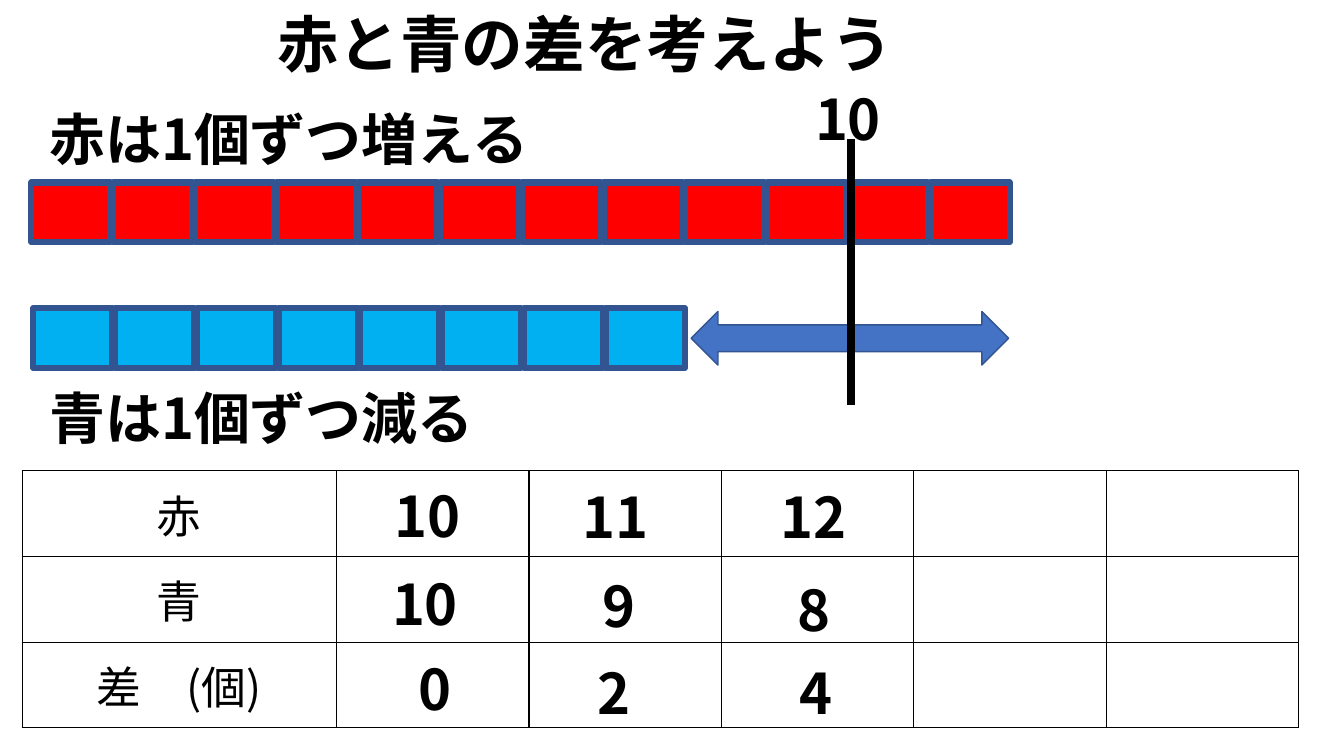
from dataclasses import dataclass

from lxml import etree
from pptx import Presentation
from pptx.dml.color import RGBColor
from pptx.enum.shapes import MSO_CONNECTOR, MSO_SHAPE
from pptx.enum.text import MSO_ANCHOR, MSO_AUTO_SIZE, PP_ALIGN
from pptx.oxml.ns import qn
from pptx.util import Cm, Pt

RECTANGLE = MSO_SHAPE.RECTANGLE
DOUBLE_ARROW = MSO_SHAPE.LEFT_RIGHT_ARROW
STRAIGHT = MSO_CONNECTOR.STRAIGHT
LEFT, CENTER = PP_ALIGN.LEFT, PP_ALIGN.CENTER
TOP, MIDDLE = MSO_ANCHOR.TOP, MSO_ANCHOR.MIDDLE
NO_AUTOFIT, GROW = MSO_AUTO_SIZE.NONE, MSO_AUTO_SIZE.SHAPE_TO_FIT_TEXT
TITLE_ONLY = 5


@dataclass(frozen=True)
class Theme:
    font: str = "Noto Sans CJK JP"
    black: str = "000000"
    red: str = "FF0000"
    blue: str = "00B0F0"
    arrow: str = "4472C4"
    outline: str = "325491"
    title_size: int = 44
    text_size: int = 40
    header_size: int = 32


class SlideBuilder:
    def __init__(self, slide, theme):
        self.slide = slide
        self.theme = theme

    def add_run(self, paragraph, text, size, bold=True, align=LEFT):
        paragraph.alignment = align
        run = paragraph.add_run()
        run.text = text
        run.font.size = Pt(size)
        run.font.bold = bold
        run.font.color.rgb = RGBColor.from_string(self.theme.black)
        run.font.name = self.theme.font
        latin = run.font._element.find(qn("a:latin"))
        east_asian = etree.Element(qn("a:ea"), typeface=self.theme.font)
        latin.addnext(east_asian)

    def title(self, text, left, top, width, height):
        title = self.slide.shapes.title
        title.left, title.top = Cm(left), Cm(top)
        title.width, title.height = Cm(width), Cm(height)
        frame = title.text_frame
        frame.auto_size = NO_AUTOFIT
        frame.vertical_anchor = TOP
        frame.word_wrap = True
        self.add_run(frame.paragraphs[0], text, self.theme.title_size)

    def text(self, text, left, top, width, height=1.96):
        box = self.slide.shapes.add_textbox(Cm(left), Cm(top), Cm(width), Cm(height))
        frame = box.text_frame
        frame.word_wrap = True
        frame.auto_size = GROW
        self.add_run(frame.paragraphs[0], text, self.theme.text_size)

    def shape(self, kind, left, top, width, height, fill, line_width):
        shape = self.slide.shapes.add_shape(kind, Cm(left), Cm(top), Cm(width), Cm(height))
        shape.shadow.inherit = False
        shape.fill.solid()
        shape.fill.fore_color.rgb = RGBColor.from_string(fill)
        shape.line.color.rgb = RGBColor.from_string(self.theme.outline)
        shape.line.width = Pt(line_width)

    def block_row(self, count, left, top, fill):
        pitch = 2.06
        for index in range(count):
            self.shape(RECTANGLE, left + index * pitch, top, 2, 1.5, fill, 4.5)

    def vertical_line(self, x, top, bottom, width):
        line = self.slide.shapes.add_connector(STRAIGHT, Cm(x), Cm(top), Cm(x), Cm(bottom))
        line.line.color.rgb = RGBColor.from_string(self.theme.black)
        line.line.width = Pt(width)
        etree.SubElement(line._element.spPr, qn("a:effectLst"))

    def cell_border(self, cell):
        properties = cell._tc.get_or_add_tcPr()
        for side in ("lnL", "lnR", "lnT", "lnB"):
            border = etree.SubElement(properties, qn(f"a:{side}"), w=str(Pt(1)))
            fill = etree.SubElement(border, qn("a:solidFill"))
            etree.SubElement(fill, qn("a:srgbClr"), val=self.theme.black)

    def table(self, headers, left, top, column_widths, row_height):
        table = self.slide.shapes.add_table(
            len(headers), len(column_widths), Cm(left), Cm(top),
            Cm(sum(column_widths)), Cm(row_height * len(headers))).table
        table.first_row = table.horz_banding = False
        for column, width in zip(table.columns, column_widths):
            column.width = Cm(width)
        for row in table.rows:
            row.height = Cm(row_height)
        for cell in table.iter_cells():
            self.cell_border(cell)
            cell.fill.background()
        for index, header in enumerate(headers):
            cell = table.cell(index, 0)
            cell.vertical_anchor = MIDDLE
            self.add_run(cell.text_frame.paragraphs[0], header,
                         self.theme.header_size, bold=False, align=CENTER)


def main():
    presentation = Presentation()
    presentation.slide_width, presentation.slide_height = Cm(33.87), Cm(19.05)
    slide = presentation.slides.add_slide(presentation.slide_layouts[TITLE_ONLY])
    theme = Theme()
    builder = SlideBuilder(slide, theme)

    # Heading
    builder.title("赤と青の差を考えよう", 6.73, 0.03, 22.02, 2.13)

    # Red and blue blocks
    builder.block_row(12, 0.79, 4.6, theme.red)
    builder.block_row(8, 0.84, 7.77, theme.blue)
    builder.text("赤は1個ずつ増える", 0.99, 2.51, 13.44)
    builder.text("青は1個ずつ減る", 0.99, 9.53, 15.14)

    # Difference arrow and the mark at ten
    builder.shape(DOUBLE_ARROW, 17.42, 7.85, 8, 1.35, theme.arrow, 1)
    builder.text("10", 20.29, 2.01, 2.9)
    builder.vertical_line(21.44, 3.51, 10.21, 6)

    # Table grid with the row names
    builder.table(["赤", "青", "差　(個)"], 0.56, 11.86, [7.92] + [4.85] * 5, 2.16)

    # Numbers placed over the grid: text, left, top, width
    answers = [
        ("10", 9.7, 12.01, 2.9), ("11", 14.43, 12.04, 2.21), ("12", 19.43, 12.04, 2.31),
        ("10", 9.63, 14.22, 2.9), ("9", 14.94, 14.27, 1.5), ("8", 19.84, 14.38, 1.5),
        ("0", 10.31, 16.36, 2.21), ("2", 14.81, 16.48, 2.21), ("4", 19.89, 16.46, 2.21),
    ]
    for answer in answers:
        builder.text(*answer)

    presentation.save("out.pptx")


if __name__ == "__main__":
    main()
